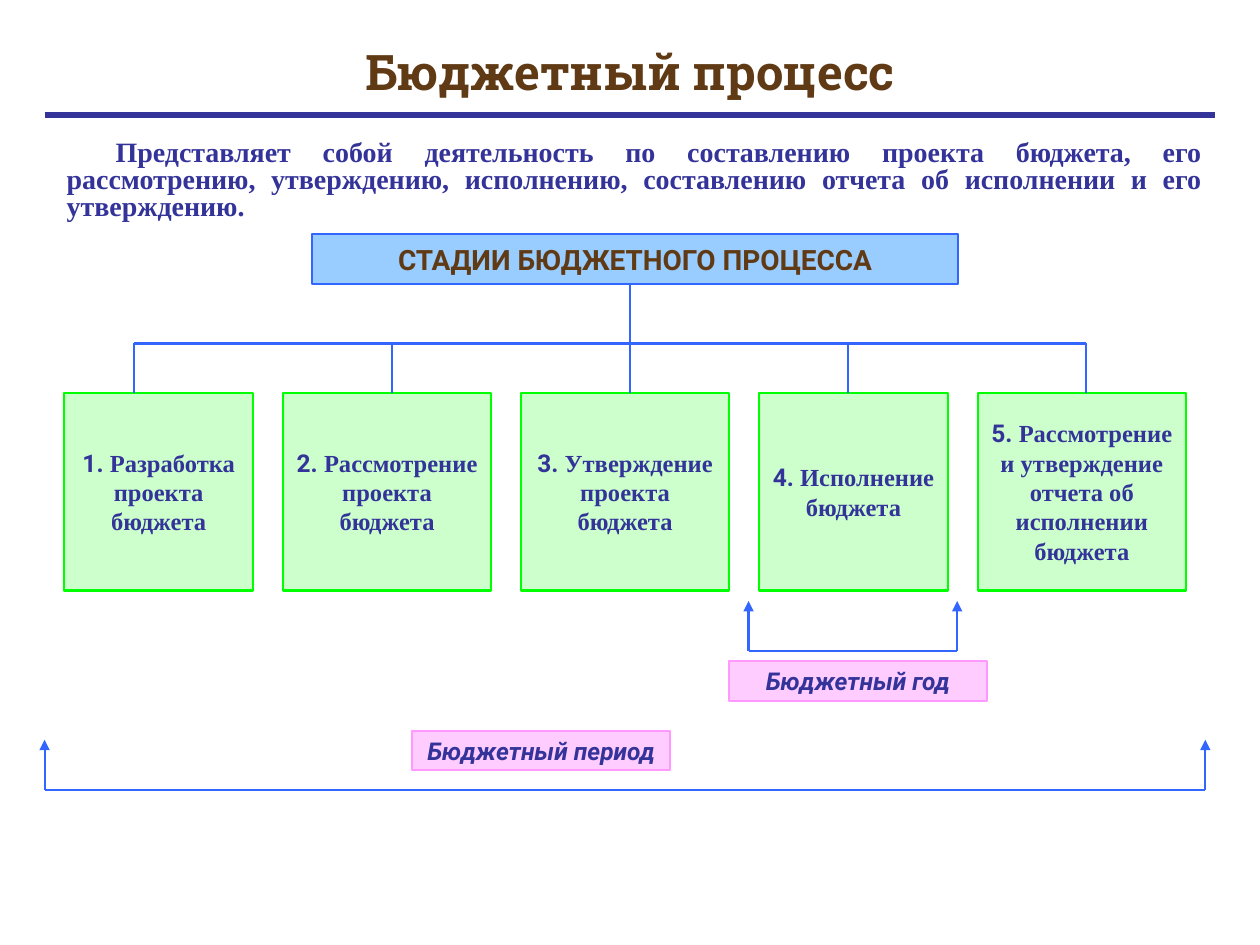
from lxml import etree
from pptx import Presentation
from pptx.dml.color import RGBColor
from pptx.enum.shapes import MSO_CONNECTOR, MSO_SHAPE
from pptx.enum.text import MSO_ANCHOR, PP_ALIGN
from pptx.oxml.ns import qn
from pptx.util import Pt

RECT, LINE = MSO_SHAPE.RECTANGLE, MSO_CONNECTOR.STRAIGHT
MIDDLE, CENTER, JUSTIFY = MSO_ANCHOR.MIDDLE, PP_ALIGN.CENTER, PP_ALIGN.JUSTIFY
SANS, SLAB, SERIF = "Roboto", "Roboto Slab", "Times New Roman"
BROWN, NAVY, BLUE = "603A14", "333399", "3366FF"

TITLE = "Бюджетный процесс"
INTRO = ("Представляет собой деятельность по составлению проекта бюджета, "
         "его рассмотрению, утверждению, исполнению, составлению отчета "
         "об исполнении и его утверждению.")
HEAD = "СТАДИИ БЮДЖЕТНОГО ПРОЦЕССА"
# text, box width, x of the line above the box
STAGES = [
    ("Разработка проекта бюджета", 108, 76.5),
    ("Рассмотрение проекта бюджета", 119, 224),
    ("Утверждение проекта бюджета", 119, 360),
    ("Исполнение бюджета", 108, 484.5),
    ("Рассмотрение и утверждение отчета об исполнении бюджета", 119, 620.5),
]
# text, label left, label top, bracket left, right, bottom
SPANS = [
    ("Бюджетный год", 416.5, 377.75, 427.75, 547, 372),
    ("Бюджетный период", 235.5, 417.5, 25.5, 688.75, 451.25),
]
HEAD_BOX = (178.5, 133.75, 369, 28.5)
STAGE_LEFT, STAGE_TOP, STAGE_HIGH, GAP = 36.75, 224.5, 113, 17
BAR_Y, STEM = 196.25, 28.5
LABEL = (147.5, 22.75)

prs = Presentation()
prs.slide_width, prs.slide_height = Pt(720), Pt(540)
slide = prs.slides.add_slide(prs.slide_layouts[6])
shapes = slide.shapes


def rgb(code):
    return RGBColor.from_string(code)


def style(font, size, name, color):
    font.size, font.name, font.bold = Pt(size), name, True
    font.color.rgb = rgb(color)


def text(box, words, size, name, color, align=CENTER):
    para = box.text_frame.paragraphs[0]
    para.text, para.alignment = words, align
    style(para.font, size, name, color)
    return para


def area(left, top, width, height):
    box = shapes.add_textbox(Pt(left), Pt(top), Pt(width), Pt(height))
    box.text_frame.word_wrap = True
    return box


def rect(left, top, width, height, fill, edge):
    box = shapes.add_shape(RECT, Pt(left), Pt(top), Pt(width), Pt(height))
    box.shadow.inherit = False
    box.fill.solid()
    box.fill.fore_color.rgb = rgb(fill)
    box.line.color.rgb, box.line.width = rgb(edge), Pt(1.25)
    box.text_frame.vertical_anchor = MIDDLE
    box.text_frame.word_wrap = True
    return box


def line(x1, y1, x2, y2, color=BLUE, width=1.25, arrow=False):
    rule = shapes.add_connector(LINE, Pt(x1), Pt(y1), Pt(x2), Pt(y2))
    rule.line.color.rgb, rule.line.width = rgb(color), Pt(width)
    if arrow:
        etree.SubElement(rule.line._get_or_add_ln(), qn("a:tailEnd"),
                         type="triangle")
    etree.SubElement(rule._element.spPr, qn("a:effectLst"))


title = area(36, 20, 648, 41)
title.text_frame.vertical_anchor = MIDDLE
text(title, TITLE, 28, SLAB, BROWN)
line(25.5, 65.75, 694.25, 65.75, NAVY, 3.75)

intro = text(area(31, 77, 663, 42), INTRO, 16, SERIF, NAVY, JUSTIFY)
intro.line_spacing, intro.space_before = 0.8, Pt(4)
intro._p.get_or_add_pPr().set("indent", str(Pt(28)))

text(rect(*HEAD_BOX, "99CCFF", BLUE), HEAD, 16, SANS, BROWN)

left = STAGE_LEFT
for num, (words, width, stem) in enumerate(STAGES, 1):
    box = rect(left, STAGE_TOP, width, STAGE_HIGH, "CCFFCC", "00FF00")
    para = text(box, f"{num}. ", 14, SANS, NAVY)
    run = para.add_run()
    run.text, run.font.name = words, SERIF
    line(stem, BAR_Y, stem, STAGE_TOP)
    left += width + GAP

line(STAGES[0][2], BAR_Y, STAGES[-1][2], BAR_Y)
line(360, HEAD_BOX[1] + HEAD_BOX[3], 360, BAR_Y)

for words, x, y, start, end, base in SPANS:
    line(start, base, end, base)
    for side in (start, end):
        line(side, base, side, base - STEM, arrow=True)
    box = rect(x, y, *LABEL, "FFCCFF", "FF99FF")
    box.text_frame.word_wrap = False
    text(box, words, 14, SANS, NAVY).font.italic = True

prs.save("out.pptx")
